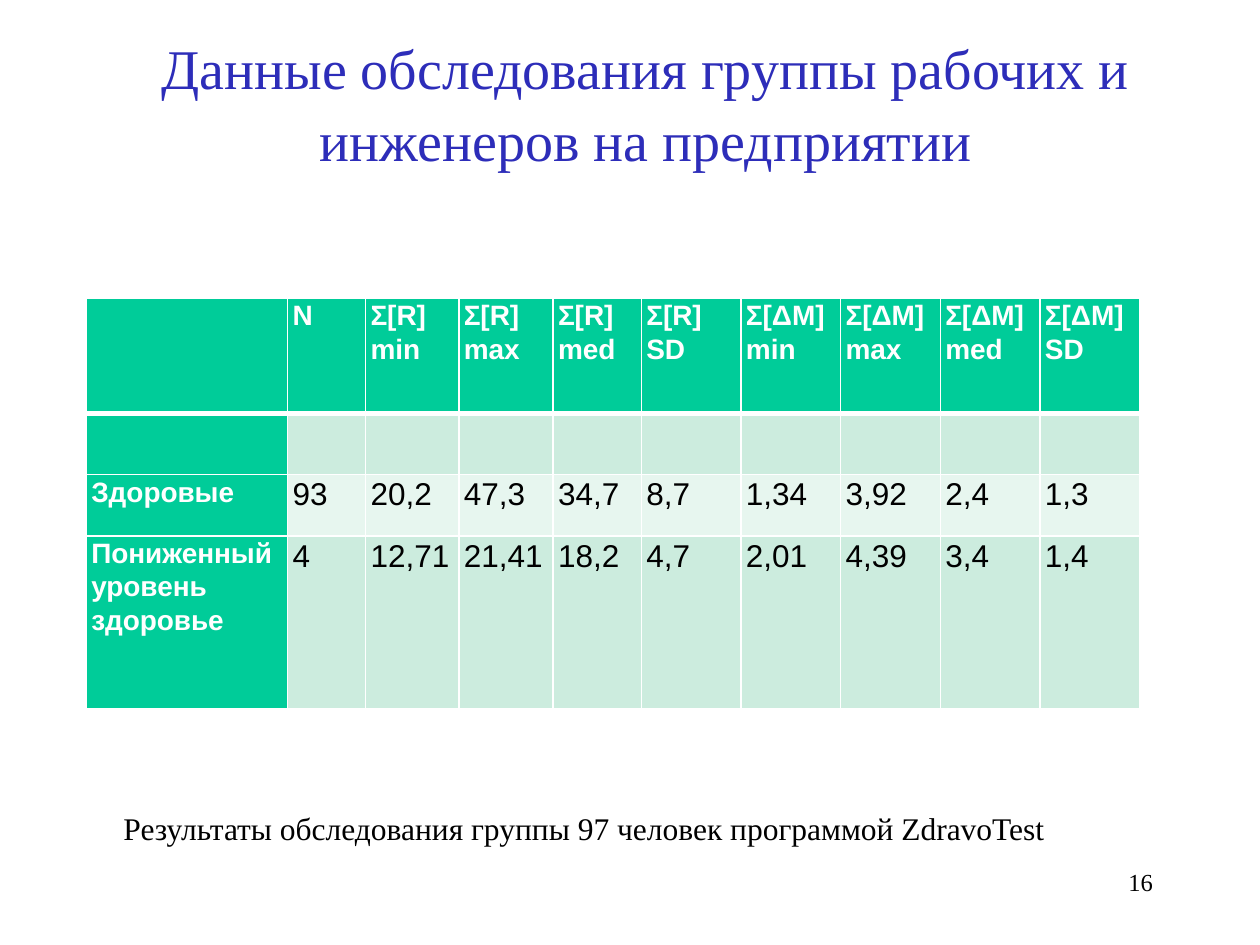
"""Build a slide with a table of health survey results for a group of workers."""
from lxml.etree import SubElement
from pptx import Presentation
from pptx.dml.color import RGBColor as RGB
from pptx.enum.text import PP_ALIGN as ALIGN
from pptx.oxml.ns import qn
from pptx.util import Cm, Pt

COLORS = {
    "title": "2D2DB9",
    "text": "000000",
    "light": "FFFFFF",
    "accent": "00CC99",
    "band_dark": "CCECDE",
    "band_pale": "E7F6EF",
}
SERIF, SANS = "Times New Roman", "Arial"
LINE_SPACING = 1.07

STATISTICS = ["min", "max", "med", "SD"]
HEADER = ["", "N"] + [f"Ʃ[{index}] {stat}" for index in ("R", "ΔM") for stat in STATISTICS]
RESULTS = [
    HEADER,
    [""] * len(HEADER),
    ["Здоровые", "93", "20,2", "47,3", "34,7", "8,7", "1,34", "3,92", "2,4", "1,3"],
    ["Пониженный\nуровень\nздоровье", "4", "12,71", "21,41", "18,2", "4,7",
     "2,01", "4,39", "3,4", "1,4"],
]
COLUMN_WIDTHS = [4.06, 1.57, 1.88, 1.9, 1.78] + [2.01] * 5
ROW_HEIGHTS = [2.31, 1.24, 1.24, 3.48]


def style_paragraph(paragraph, font_name, size, color, bold=False, align=None, spacing=None):
    """Set the font and layout of a paragraph."""
    paragraph.alignment = align
    paragraph.line_spacing = spacing
    font = paragraph.font
    font.name, font.size, font.bold = font_name, Pt(size), bold
    font.color.rgb = RGB.from_string(COLORS[color])


def add_text(slide, text, box, size, color, align=ALIGN.LEFT, spacing=None):
    """Add a wrapped serif text box; box is left, top, width, height in cm."""
    frame = slide.shapes.add_textbox(*map(Cm, box)).text_frame
    frame.word_wrap = True
    frame.text = text
    style_paragraph(frame.paragraphs[0], SERIF, size, color, align=align, spacing=spacing)


def add_borders(cell, top, bottom):
    """Draw light cell borders with the given top and bottom widths in points."""
    properties = cell._tc.get_or_add_tcPr()
    for side, width in (("L", 1), ("R", 1), ("T", top), ("B", bottom)):
        line = SubElement(properties, qn(f"a:ln{side}"), w=str(Pt(width)))
        fill = SubElement(line, qn("a:solidFill"))
        SubElement(fill, qn("a:srgbClr"), val=COLORS["light"])


def fill_cell(cell, text, row, column):
    """Write and colour one cell according to its place in the table."""
    heading = row == 0 or column == 0
    band = "band_dark" if row % 2 else "band_pale"
    add_borders(cell, top=3 if row == 1 else 1, bottom=3 if row == 0 else 1)
    cell.fill.solid()
    cell.fill.fore_color.rgb = RGB.from_string(COLORS["accent" if heading else band])
    cell.margin_left = cell.margin_right = Cm(0.1)
    cell.margin_top = cell.margin_bottom = 0
    cell.text = text
    for paragraph in cell.text_frame.paragraphs:
        style_paragraph(paragraph, SANS, 16 if heading else 18,
                        "light" if heading else "text", heading, ALIGN.JUSTIFY, LINE_SPACING)


def add_results_table(slide):
    """Add the table of survey results."""
    table = slide.shapes.add_table(
        len(RESULTS), len(HEADER), Cm(1.74), Cm(6.02),
        Cm(sum(COLUMN_WIDTHS)), Cm(sum(ROW_HEIGHTS))).table
    for column, width in zip(table.columns, COLUMN_WIDTHS):
        column.width = Cm(width)
    for row, height in zip(table.rows, ROW_HEIGHTS):
        row.height = Cm(height)
    for row, values in enumerate(RESULTS):
        for column, value in enumerate(values):
            fill_cell(table.cell(row, column), value, row, column)


def main():
    """Build and save the slide."""
    deck = Presentation()
    deck.slide_width, deck.slide_height = Cm(25.4), Cm(19.05)
    slide = deck.slides.add_slide(deck.slide_layouts[6])
    add_text(slide, "16", (18.21, 17.35, 5.28, 1.27), 14, "text", ALIGN.RIGHT)
    add_text(slide, "Данные обследования группы рабочих и инженеров на предприятии",
             (2.54, 0.46, 20.96, 3.18), 32, "title", ALIGN.CENTER, LINE_SPACING)
    add_results_table(slide)
    add_text(slide, "Результаты обследования группы 97 человек программой ZdravoTest",
             (2.24, 16.18, 21.56, 1.02), 18, "text")
    deck.save("out.pptx")


if __name__ == "__main__":
    main()
